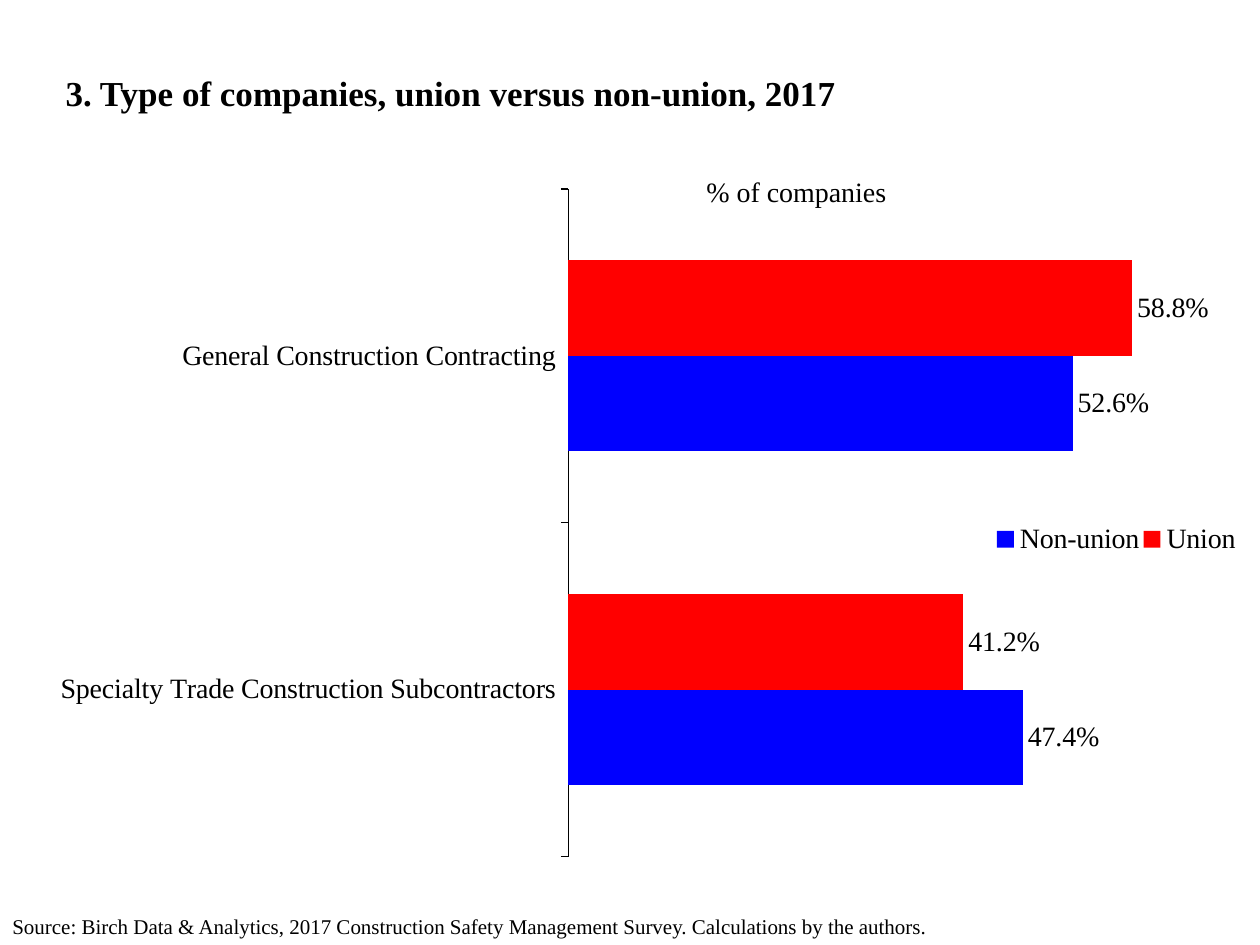
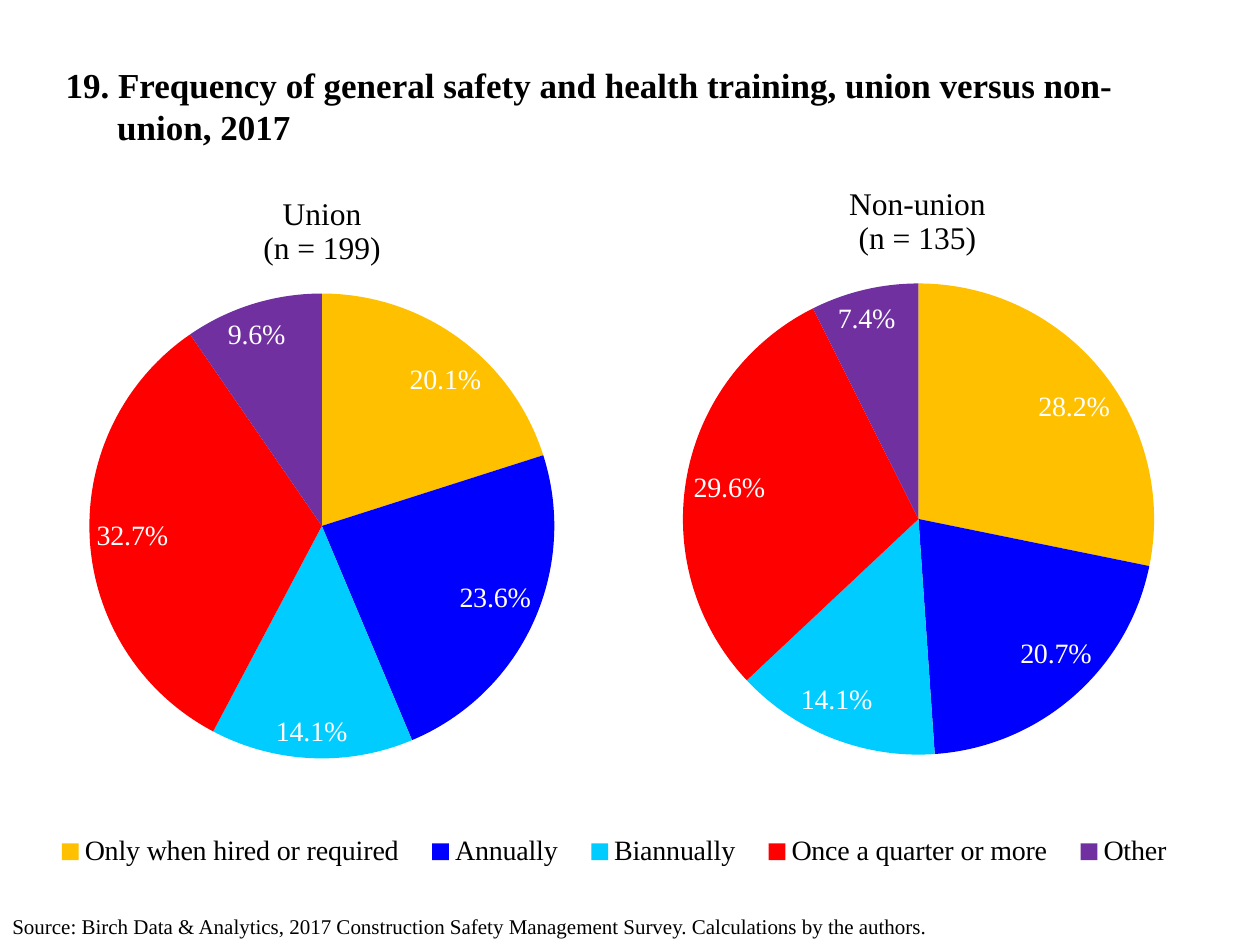
import lxml.etree
import pptx
import pptx.chart.data
import pptx.dml.color
import pptx.enum.chart
import pptx.enum.text
import pptx.oxml
import pptx.oxml.ns
import pptx.util

RGBColor = pptx.dml.color.RGBColor
BLACK = RGBColor(0x00, 0x00, 0x00)
WHITE = RGBColor(0xFF, 0xFF, 0xFF)
RED = RGBColor(0xFF, 0x00, 0x00)
BLUE = RGBColor(0x00, 0x00, 0xFF)
AMBER = RGBColor(0xFF, 0xC0, 0x00)
CYAN = RGBColor(0x00, 0xCC, 0xFF)
PURPLE = RGBColor(0x70, 0x30, 0xA0)

COLUMNS, ROWS = 10, 7.5
FONT = "Times New Roman"
TITLE_SIZE, CHART_TITLE_SIZE, CHART_SIZE, SOURCE_SIZE = 20, 18, 16, 12
PERCENT = "0.0%"
SOURCE = ("Source: Birch Data & Analytics, 2017 Construction Safety Management Survey. "
          "Calculations by the authors.")

FREQUENCY_COLORS = {
    "Only when hired or required": AMBER,
    "Annually": BLUE,
    "Biannually": CYAN,
    "Once a quarter or more": RED,
    "Other": PURPLE,
}


class SurveyDeck:
    """Holds the shared style and the slide being built; areas are in grid columns and rows."""

    def __init__(self):
        self.deck = pptx.Presentation()
        self.deck.slide_width = pptx.util.Inches(10)
        self.deck.slide_height = pptx.util.Inches(7.5)
        self.column = self.deck.slide_width / COLUMNS
        self.row = self.deck.slide_height / ROWS
        self.slide = None

    def area(self, left, top, width, height):
        return (round(left * self.column), round(top * self.row),
                round(width * self.column), round(height * self.row))

    def style(self, font, size, color=BLACK, bold=False):
        font.name = FONT
        font.size = pptx.util.Pt(size)
        font.bold = bold
        font.color.rgb = color

    def span(self, para, words, size, bold=False):
        span = para.add_run()
        span.text = words
        self.style(span.font, size, bold=bold)

    def page(self, lines, height, indent):
        """Start a slide with a hanging title and the source line."""
        self.slide = self.deck.slides.add_slide(self.deck.slide_layouts[5])
        title = self.slide.shapes.title
        title.left, title.top, title.width, title.height = self.area(0.42, 0.42, 9.17, height)
        title.text_frame.vertical_anchor = pptx.enum.text.MSO_ANCHOR.MIDDLE
        para = title.text_frame.paragraphs[0]
        para.alignment = pptx.enum.text.PP_ALIGN.LEFT
        hanging = round(indent * self.column)
        properties = para._p.get_or_add_pPr()
        properties.set("marL", str(hanging))
        properties.set("indent", str(-hanging))
        for number, line in enumerate(lines):
            if number:
                para.add_line_break()
            self.span(para, line, TITLE_SIZE, bold=True)
        self.text(SOURCE, (0, 7.2, 10, 0.3), SOURCE_SIZE)

    def text(self, words, area, size, align=pptx.enum.text.PP_ALIGN.LEFT):
        box = self.slide.shapes.add_textbox(*self.area(*area))
        box.text_frame.word_wrap = True
        para = box.text_frame.paragraphs[0]
        para.alignment = align
        self.span(para, words, size)

    def chart(self, kind, area, categories, series, number_format):
        data = pptx.chart.data.CategoryChartData(number_format=number_format)
        data.categories = categories
        for name, values in series.items():
            data.add_series(name, values)
        chart = self.slide.shapes.add_chart(kind, *self.area(*area), data).chart
        self.style(chart.font, CHART_SIZE)
        chart.has_title = False
        chart.has_legend = False
        clear = pptx.oxml.parse_xml(
            f'<c:spPr {pptx.oxml.ns.nsdecls("c", "a")}><a:noFill/>'
            "<a:ln><a:noFill/></a:ln></c:spPr>")
        chart._chartSpace.chart.addnext(clear)
        return chart

    def place(self, part, index, chart_area, part_area, inner=False):
        """Pin a chart part to a slide area, as shares of the chart's own area."""
        name = pptx.oxml.ns.qn
        for old in part.findall(name("c:layout")):
            part.remove(old)
        layout = pptx.oxml.parse_xml(f'<c:layout {pptx.oxml.ns.nsdecls("c")}/>')
        manual = lxml.etree.SubElement(layout, name("c:manualLayout"))
        left, top, width, height = chart_area
        settings = {"layoutTarget": "inner"} if inner else {}
        settings.update(xMode="edge", yMode="edge")
        shares = [(part_area[0] - left) / width, (part_area[1] - top) / height]
        if len(part_area) == 4:
            shares += [part_area[2] / width, part_area[3] / height]
        settings.update(zip("xywh", shares))
        for tag, value in settings.items():
            lxml.etree.SubElement(manual, name(f"c:{tag}")).set("val", str(value))
        part.insert(index, layout)

    def place_plot(self, chart, chart_area, plot_area):
        self.place(chart._chartSpace.chart.plotArea, 0, chart_area, plot_area, inner=True)

    def legend(self, chart, chart_area, legend_area):
        chart.has_legend = True
        chart.legend.position = pptx.enum.chart.XL_LEGEND_POSITION.BOTTOM
        chart.legend.include_in_layout = False
        self.style(chart.legend.font, CHART_SIZE)
        self.place(chart.legend._element, 1, chart_area, legend_area)

    def labels(self, plot, position, color):
        plot.has_data_labels = True
        labels = plot.data_labels
        labels.number_format = PERCENT
        labels.number_format_is_linked = False
        labels.position = position
        self.style(labels.font, CHART_SIZE, color)
        return labels

    def bars(self, area, plot_area, legend_area, categories, series, colors, maximum):
        chart = self.chart(pptx.enum.chart.XL_CHART_TYPE.BAR_CLUSTERED,
                           area, categories, series, PERCENT)
        self.place_plot(chart, area, plot_area)
        self.legend(chart, area, legend_area)
        plot = chart.plots[0]
        plot.gap_width = 150
        plot.vary_by_categories = False
        for bar, color in zip(plot.series, colors):
            bar.format.fill.solid()
            bar.format.fill.fore_color.rgb = color
        self.labels(plot, pptx.enum.chart.XL_LABEL_POSITION.OUTSIDE_END,
                    BLACK).show_value = True
        axis = chart.category_axis
        axis.reverse_order = True
        axis.major_tick_mark = pptx.enum.chart.XL_TICK_MARK.OUTSIDE
        axis.format.line.color.rgb = BLACK
        axis.format.line.width = pptx.util.Pt(0.75)
        values = chart.value_axis
        values.has_major_gridlines = False
        values.minimum_scale, values.maximum_scale = 0, maximum
        values.visible = False

    def pie(self, area, plot_area, title_lines, title_corner, categories, values, colors):
        chart = self.chart(pptx.enum.chart.XL_CHART_TYPE.PIE, area, categories,
                           {"Series 1": values}, "General")
        self.place_plot(chart, area, plot_area)
        chart.has_title = True
        frame = chart.chart_title.text_frame
        for number, line in enumerate(title_lines):
            para = frame.add_paragraph() if number else frame.paragraphs[0]
            self.span(para, line, CHART_TITLE_SIZE)
        self.place(chart.chart_title._element, 1, area, title_corner)
        plot = chart.plots[0]
        plot.vary_by_categories = True
        for number, color in enumerate(colors):
            fill = plot.series[0].points[number].format.fill
            fill.solid()
            fill.fore_color.rgb = color
        labels = self.labels(plot, pptx.enum.chart.XL_LABEL_POSITION.BEST_FIT, WHITE)
        labels.show_percentage = True
        labels.show_value = False
        return chart


def company_types(survey):
    survey.page(["3. Type of companies, union versus non-union, 2017"], 0.63, 0.51)
    survey.bars(
        area=(0.17, 1.25, 9.67, 5.58),
        plot_area=(4.51, 1.5, 5.33, 5.3),
        legend_area=(7.88, 4.08, 1.96, 0.4),
        categories=["General Construction Contracting",
                    "Specialty Trade Construction Subcontractors"],
        series={"Union": (0.588, 0.412), "Non-union": (0.526, 0.474)},
        colors=(RED, BLUE),
        maximum=0.7)
    survey.text("% of companies", (5.42, 1.34, 1.8, 0.36), CHART_SIZE,
                pptx.enum.text.PP_ALIGN.CENTER)


def training_frequency(survey):
    survey.page(["19. Frequency of general safety and health training, union versus non-",
                 "union, 2017"], 0.83, 0.41)
    colors = list(FREQUENCY_COLORS.values())
    union_area = (0.06, 1.17, 9.88, 5.81)
    union = survey.pie(union_area, (0.71, 2.33, 3.69, 3.69),
                       ["Union", "(n = 199)"], (2.06, 1.52),
                       list(FREQUENCY_COLORS), (20.1, 23.6, 14.1, 32.7, 9.6), colors)
    survey.legend(union, union_area, (0.3, 6.55, 9.15, 0.42))
    survey.pie((4.67, 1.25, 5.08, 5.72), (5.42, 2.25, 3.74, 3.74),
               ["Non-union", "(n = 135)"], (6.71, 1.44),
               ["1", "2", "3", "4", "5"], (28.2, 20.7, 14.1, 29.6, 7.4), colors)


def main():
    survey = SurveyDeck()
    company_types(survey)
    training_frequency(survey)
    survey.deck.save("out.pptx")


if __name__ == "__main__":
    main()
